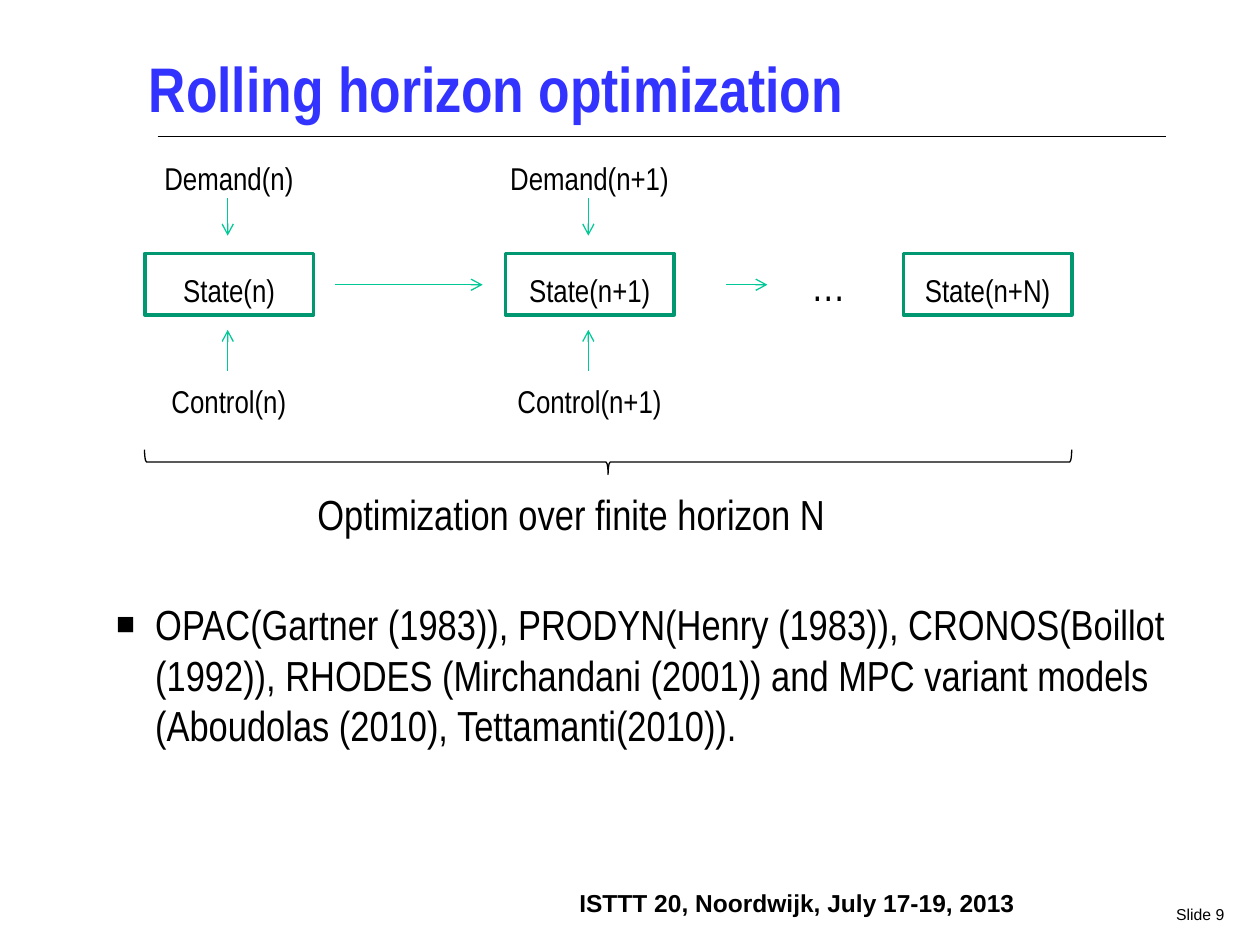
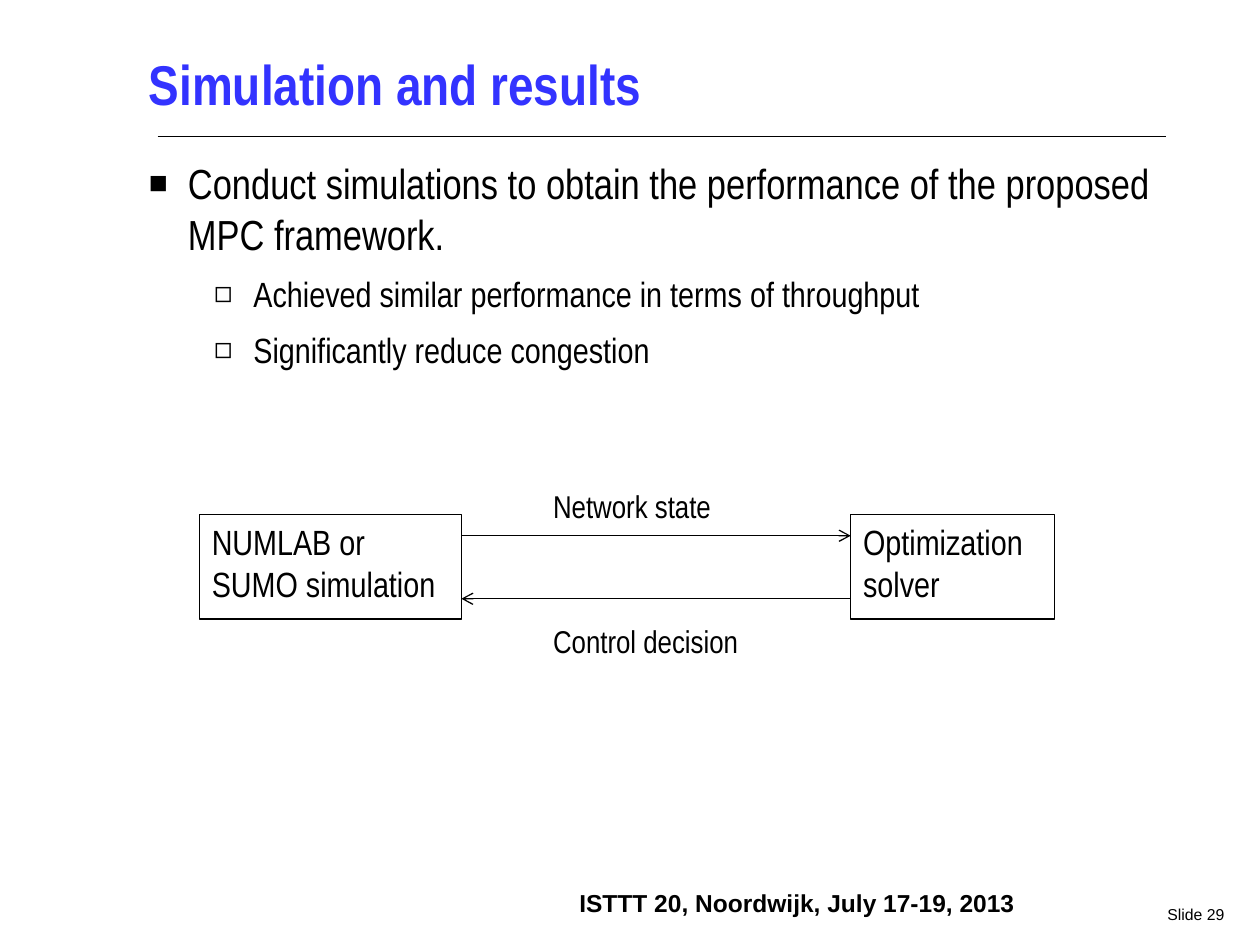
"""Build two slides on rolling horizon optimization and its simulation results."""
from lxml import etree
from pptx import Presentation
from pptx import util as u
from pptx.dml.color import RGBColor
from pptx.enum import shapes, text
from pptx.oxml import ns

Cm, Pt = u.Cm, u.Pt
BLACK = RGBColor(0x00, 0x00, 0x00)
TITLE_BLUE = RGBColor(0x33, 0x33, 0xFF)
BOX_GREEN = RGBColor(0x00, 0x97, 0x71)
ARROW_GREEN = RGBColor(0x00, 0xC8, 0x96)
NARROW = "Arial Narrow"
LEFT, CENTER, RIGHT = text.PP_ALIGN.LEFT, text.PP_ALIGN.CENTER, text.PP_ALIGN.RIGHT
TOP, BOTTOM = text.MSO_ANCHOR.TOP, text.MSO_ANCHOR.BOTTOM


def add_text(s, at, words, size, font=NARROW, color=BLACK, bold=False, align=LEFT,
             anchor=TOP, inset=True, wrap=True, border=None):
    """Add a text box, or a rectangle when a (colour, width) border is given."""
    at = [Cm(v) for v in at]
    if border:
        sp = s.shapes.add_shape(shapes.MSO_SHAPE.RECTANGLE, *at)
        sp.shadow.inherit = False
        sp.fill.background()
        sp.line.color.rgb, sp.line.width = border[0], Pt(border[1])
    else:
        sp = s.shapes.add_textbox(*at)
    tf = sp.text_frame
    tf.text = words
    tf.word_wrap = wrap
    tf.vertical_anchor = anchor
    if not inset:
        tf.margin_left = tf.margin_top = tf.margin_right = tf.margin_bottom = 0
    for p in tf.paragraphs:
        p.alignment = align
        for r in p.runs:
            r.font.name, r.font.size, r.font.bold = font, Pt(size), bold
            r.font.color.rgb = color
    return sp


def add_line(s, x1, y1, x2, y2, color=BLACK, arrow=True):
    """Add a thin straight line, by default with an open arrowhead at its end."""
    c = s.shapes.add_connector(shapes.MSO_CONNECTOR.STRAIGHT, Cm(x1), Cm(y1), Cm(x2), Cm(y2))
    c.line.color.rgb, c.line.width = color, Pt(0.75)
    if arrow:
        etree.SubElement(c.line._get_or_add_ln(), ns.qn("a:tailEnd"), type="arrow")
    etree.SubElement(c._element.spPr, ns.qn("a:effectLst"))


prs = Presentation()
prs.slide_width, prs.slide_height = Cm(25.4), Cm(19.05)

BULLETS = [("■", "75000", 0.79, 24), ("◻", "85000", 2.11, 20)]
pages = [
    ("Rolling horizon optimization", 36, 9, (2.34, 12.07, 21.62, 3.81), [
        (0, "OPAC(Gartner (1983)), PRODYN(Henry (1983)), CRONOS(Boillot (1992)), "
            "RHODES (Mirchandani (2001)) and MPC variant models "
            "(Aboudolas (2010), Tettamanti(2010)).")]),
    ("Simulation and results", 32, 29, (3, 3.18, 20.96, 12.7), [
        (0, "Conduct simulations to obtain the performance of the proposed MPC framework."),
        (1, "Achieved similar performance in terms of throughput"),
        (1, "Significantly reduce congestion")]),
]

for title, title_size, number, body_at, items in pages:
    s = prs.slides.add_slide(prs.slide_layouts[6])
    add_line(s, 3.18, 2.75, 23.5, 2.75, arrow=False)
    add_text(s, (11.84, 18.24, 12.93, 0.38), f"Slide {number} ", 9, "Arial",
             align=RIGHT, inset=False)
    add_text(s, (3, 0.99, 19.43, 1.55), title, title_size, color=TITLE_BLUE,
             bold=True, inset=False)
    add_text(s, (11.43, 17.78, 9.32, 0.86), "ISTTT 20, Noordwijk, July 17-19, 2013", 14,
             "Arial", bold=True, wrap=False)
    body = add_text(s, body_at, "\n".join(words for _, words in items), 24, inset=False)
    for i, (p, (level, _)) in enumerate(zip(body.text_frame.paragraphs, items)):
        char, percent, indent, size = BULLETS[level]
        p.level = level
        p.runs[0].font.size = Pt(size)
        if i:
            p.space_before = Pt(size * 0.4)
        pPr = p._p.get_or_add_pPr()
        pPr.set("marL", str(Cm(indent)))
        pPr.set("indent", str(Cm(-0.79)))
        color = etree.SubElement(pPr, ns.qn("a:buClr"))
        etree.SubElement(color, ns.qn("a:srgbClr"), val=str(BLACK))
        etree.SubElement(pPr, ns.qn("a:buSzPct"), val=percent)
        etree.SubElement(pPr, ns.qn("a:buFont"), typeface="Arial")
        etree.SubElement(pPr, ns.qn("a:buChar"), char=char)

horizon, simulation = prs.slides

for x, step in [(2.92, "n"), (10.19, "n+1"), (18.21, "n+N")]:
    add_text(horizon, (x, 5.11, 3.4, 1.24), f"State({step})", 18, align=CENTER,
             anchor=BOTTOM, border=(BOX_GREEN, 2))
    if step != "n+N":
        for name, y, start, end in [("Demand", 3.09, 3.99, 4.75), ("Control", 7.57, 7.47, 6.65)]:
            add_text(horizon, (x - 0.26, y, 3.91, 0.81), f"{name}({step})", 18, align=CENTER)
            add_line(horizon, x + 1.67, start, x + 1.67, end, ARROW_GREEN)
for x1, x2 in [(6.76, 9.73), (14.63, 15.47)]:
    add_line(horizon, x1, 5.74, x2, 5.74, ARROW_GREEN)
add_text(horizon, (16.1, 5.11, 1.27, 0.99), "…", 24)

brace = horizon.shapes.add_shape(shapes.MSO_SHAPE.LEFT_BRACE, Cm(12.01), Cm(-0.03), Cm(0.5), Cm(18.69))
brace.rotation = 270
brace.shadow.inherit = False
brace.fill.background()
brace.line.color.rgb, brace.line.width = BLACK, Pt(0.75)
add_text(horizon, (6.15, 9.73, 13.59, 0.99), "Optimization over finite horizon N", 24)

for x, width, words in [(4.02, 5.28, "NUMLAB or SUMO simulation"), (17.15, 4.11, "Optimization solver")]:
    add_text(simulation, (x, 10.37, width, 2.11), words, 20, border=(BLACK, 0.75))
for words, label_y, x1, x2, y in [("Network state", 9.7, 9.3, 17.15, 10.8),
                                  ("Control decision", 12.42, 17.15, 9.3, 12.07)]:
    add_line(simulation, x1, y, x2, y)
    add_text(simulation, (10.9, label_y, 4.65, 1.02), words, 18)

prs.save("out.pptx")
